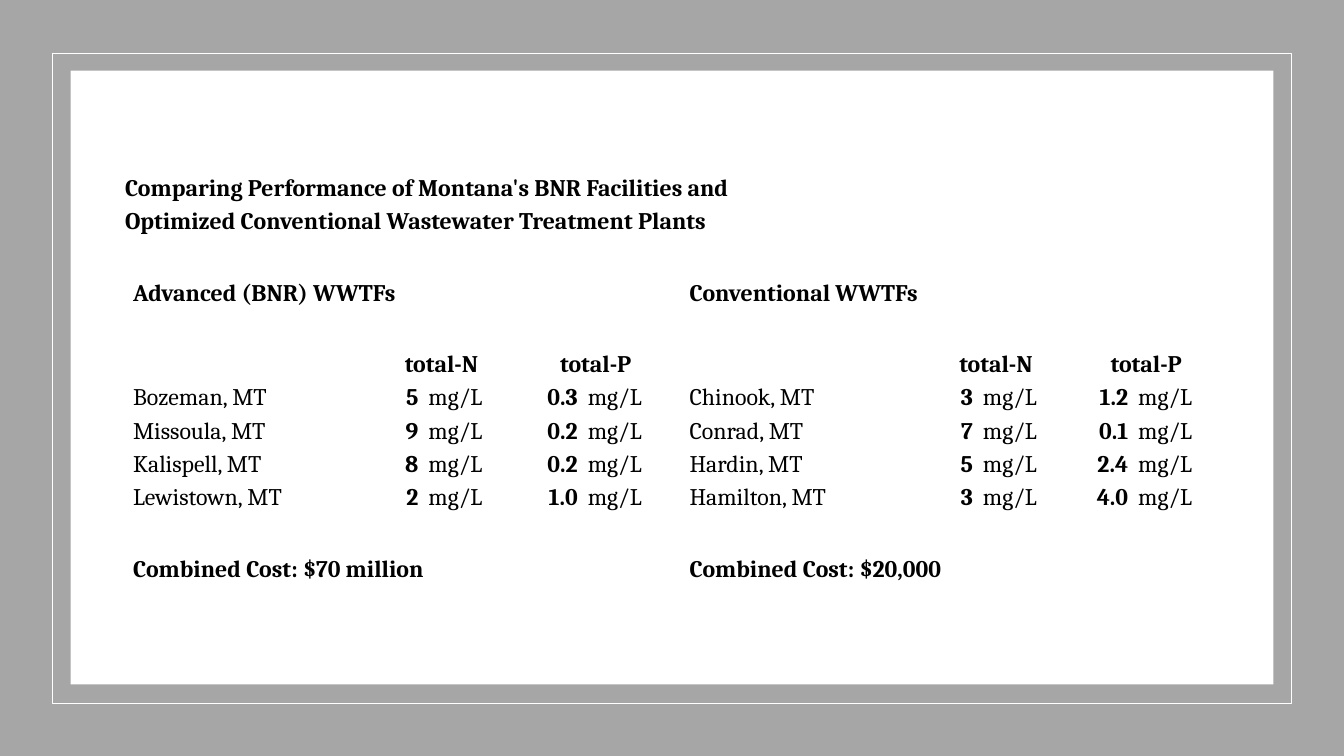
from dataclasses import dataclass

from lxml.etree import SubElement
from pptx import Presentation
from pptx.dml.color import RGBColor
from pptx.enum.shapes import MSO_SHAPE as Shape
from pptx.enum.text import MSO_ANCHOR as Anchor, PP_ALIGN as Align
from pptx.oxml.ns import qn
from pptx.util import Inches, Pt


@dataclass(frozen=True)
class Theme:
    backdrop: str = "A6A6A6"
    paper: str = "FFFFFF"
    ink: str = "000000"
    font: str = "Cambria"
    size: float = 17
    rule: float = 1
    thin_rule: float = 0.5


THEME = Theme()

TITLE = ["Comparing Performance of Montana's BNR Facilities and",
         "Optimized Conventional Wastewater Treatment Plants"]
NUTRIENTS = ["total-N", "total-P"]
UNIT = "mg/L"

ADVANCED = {
    "heading": "Advanced (BNR) WWTFs",
    "heading_span": 3,
    "plants": [("Bozeman, MT", "5", "0.3"), ("Missoula, MT", "9", "0.2"),
               ("Kalispell, MT", "8", "0.2"), ("Lewistown, MT", "2", "1.0")],
    "cost": "Combined Cost: $70 million",
}
CONVENTIONAL = {
    "heading": "Conventional WWTFs",
    "heading_span": 2,
    "plants": [("Chinook, MT", "3", "1.2"), ("Conrad, MT", "7", "0.1"),
               ("Hardin, MT", "5", "2.4"), ("Hamilton, MT", "3", "4.0")],
    "cost": "Combined Cost: $20,000",
}

# Table grid: two panels of five columns with a narrow gap between them
ADVANCED_WIDTHS = [2.41, 0.6, 0.88, 0.7, 0.88]
GAP_WIDTH = 0.05
CONVENTIONAL_WIDTHS = [2.41, 0.58, 0.86, 0.68, 0.86]
WIDTHS = ADVANCED_WIDTHS + [GAP_WIDTH] + CONVENTIONAL_WIDTHS
GAP_COLUMN = len(ADVANCED_WIDTHS)
TITLE_SPAN = 7

# Table rows
HEADING_ROW, NUTRIENT_ROW, FIRST_PLANT_ROW, COST_ROW = 3, 5, 6, 11
LAST_PLANT_ROW = FIRST_PLANT_ROW + len(ADVANCED["plants"]) - 1
SPACER_ROWS = (2, 4, 10)
ROW_HEIGHT, SPACER_HEIGHT = 0.33, 0.38
ROW_COUNT = COST_ROW + 1


def write(cell, text, bold=False, align=Align.LEFT, left=0.01, right=0.01):
    cell.margin_left, cell.margin_right = Inches(left), Inches(right)
    cell.margin_top = Inches(0.01)
    cell.vertical_anchor = Anchor.MIDDLE
    paragraph = cell.text_frame.paragraphs[0]
    paragraph.alignment = align
    run = paragraph.add_run()
    run.text = text
    run.font.name = THEME.font
    run.font.size = Pt(THEME.size)
    run.font.bold = bold
    run.font.color.rgb = RGBColor.from_string(THEME.ink)


def add_panel(slide, box, fill=None, line=None):
    panel = slide.shapes.add_shape(Shape.RECTANGLE, *map(Inches, box))
    panel.shadow.inherit = False
    if fill:
        panel.fill.solid()
        panel.fill.fore_color.rgb = RGBColor.from_string(fill)
    else:
        panel.fill.background()
    if line:
        panel.line.color.rgb = RGBColor.from_string(line)
        panel.line.width = Pt(THEME.rule)
    else:
        panel.line.fill.background()


def add_frame(slide, box):
    """Grey backdrop, thin white outline and white page, from back to front."""
    left, top, width, height = box
    add_panel(slide, box, fill=THEME.backdrop)
    add_panel(slide, (left + 0.52, top + 0.53, width - 1.04, height - 1.05),
              line=THEME.paper)
    add_panel(slide, (left + 0.7, top + 0.7, width - 1.4, height - 1.41),
              fill=THEME.paper)


def set_border(cell, side, points):
    properties = cell._tc.get_or_add_tcPr()
    border = SubElement(properties, qn(f"a:ln{side}"), w=str(Pt(points)))
    fill = SubElement(border, qn("a:solidFill"))
    SubElement(fill, qn("a:srgbClr"), val=THEME.paper)


def style_cell(cell, row, column):
    cell.margin_left = cell.margin_right = 0
    cell.margin_top = cell.margin_bottom = 0
    if row >= HEADING_ROW and column != GAP_COLUMN:
        above_thin = FIRST_PLANT_ROW < row <= LAST_PLANT_ROW
        below_thin = FIRST_PLANT_ROW <= row < LAST_PLANT_ROW
        set_border(cell, "T", THEME.thin_rule if above_thin else THEME.rule)
        set_border(cell, "B", THEME.thin_rule if below_thin else THEME.rule)
    cell.fill.background()


def write_span(table, row, column, span, text, **style):
    first = table.cell(row, column)
    first.merge(table.cell(row, column + span - 1))
    write(first, text, bold=True, **style)


def fill_plant_group(table, column, group):
    """One group of plants, whose five columns start at the given column."""
    write_span(table, HEADING_ROW, column, group["heading_span"],
               group["heading"], left=0.09)
    for index, nutrient in enumerate(NUTRIENTS):
        write_span(table, NUTRIENT_ROW, column + 1 + 2 * index, 2, nutrient,
                   align=Align.CENTER)
    for row, (plant, *values) in enumerate(group["plants"], FIRST_PLANT_ROW):
        write(table.cell(row, column), plant, left=0.09)
        for index, value in enumerate(values):
            value_column = column + 1 + 2 * index
            write(table.cell(row, value_column), value, bold=True,
                  align=Align.RIGHT, right=0.09)
            write(table.cell(row, value_column + 1), UNIT)
    write_span(table, COST_ROW, column, 3, group["cost"], left=0.09)


def add_comparison(slide, box):
    table = slide.shapes.add_table(ROW_COUNT, len(WIDTHS),
                                   *map(Inches, box)).table
    table.first_row = table.horz_banding = False
    for column, width in zip(table.columns, WIDTHS):
        column.width = Inches(width)
    for index, row in enumerate(table.rows):
        row.height = Inches(SPACER_HEIGHT if index in SPACER_ROWS
                            else ROW_HEIGHT)
        for column, cell in enumerate(row.cells):
            style_cell(cell, index, column)

    # Title lines, then the two groups side by side
    for row, line in enumerate(TITLE):
        write_span(table, row, 0, TITLE_SPAN, line)
    fill_plant_group(table, 0, ADVANCED)
    fill_plant_group(table, GAP_COLUMN + 1, CONVENTIONAL)


def main():
    deck = Presentation()
    deck.slide_width, deck.slide_height = Inches(13.33), Inches(7.5)
    slide = deck.slides.add_slide(deck.slide_layouts.get_by_name("Blank"))
    add_frame(slide, (0, 0, 13.33, 7.5))
    add_comparison(slide, (1.23, 1.7, 10.9, 4.1))
    deck.save("out.pptx")


if __name__ == "__main__":
    main()
